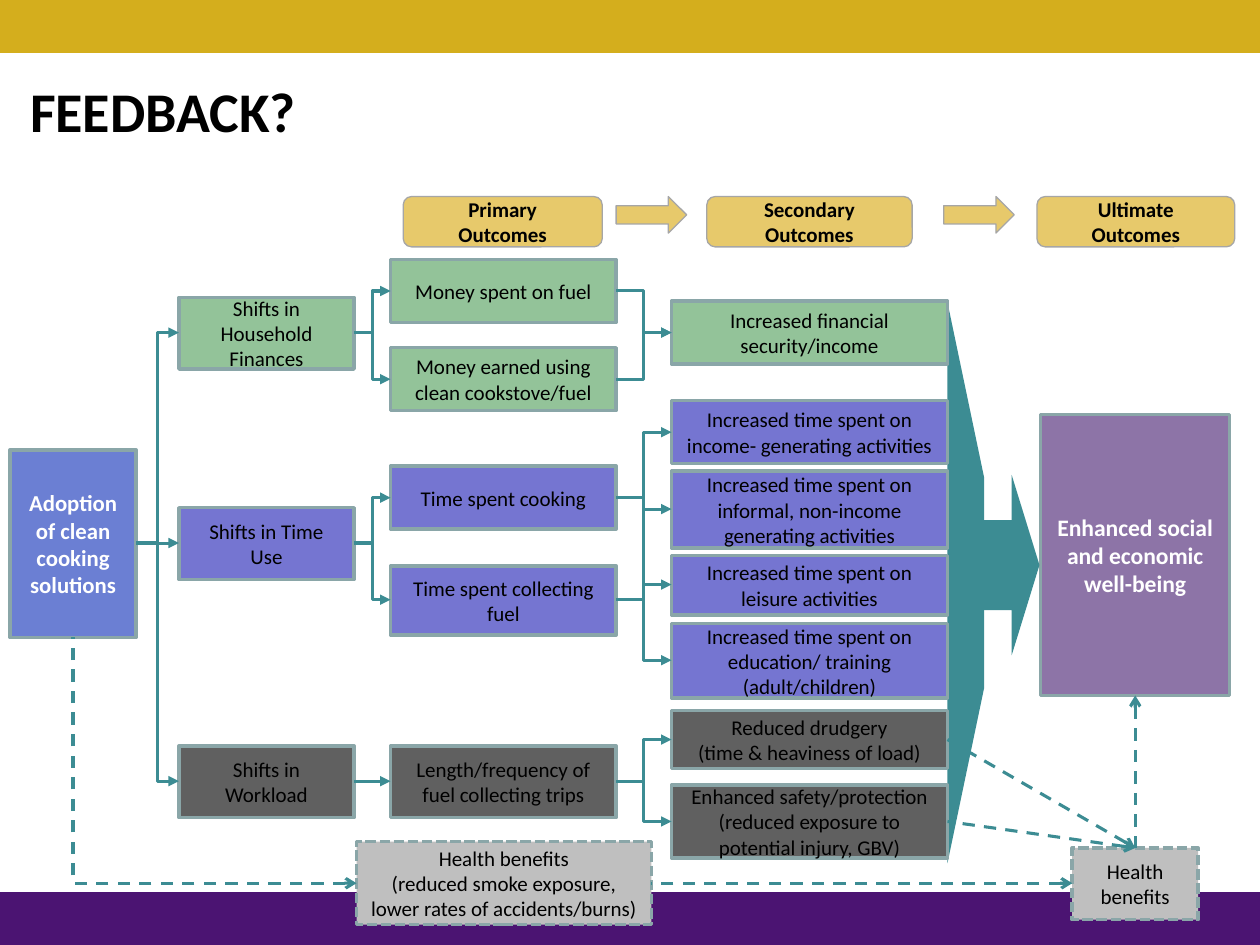
"""Draw the outcome pathway slide for clean cooking adoption."""
from dataclasses import dataclass
from typing import Optional

from lxml import etree
from pptx import Presentation
from pptx import util as u
from pptx.dml import color
from pptx.enum import dml, shapes, text
from pptx.oxml import ns

PX = 9144
COLORS = {
    "gold_band": "D4AE1D", "purple_band": "4B1472", "teal": "3C8C93",
    "border": "8AA6A8", "grey_border": "A6A6A6", "adoption": "4760C9",
    "finance": "93C399", "time": "7575D1", "work": "606060",
    "wellbeing": "481F72", "health": "BFBFBF", "heading": "D6A300",
    "black": "000000", "white": "FFFFFF",
}
KIND = shapes.MSO_SHAPE
DASH = dml.MSO_LINE


@dataclass(frozen=True)
class Box:
    label: str
    x: int
    y: int
    w: int
    h: int
    fill: str
    kind: int = KIND.RECTANGLE
    alpha: int = 100
    line: Optional[str] = "border"
    weight: float = 2
    dash: Optional[int] = None
    size: float = 12
    bold: bool = False
    ink: str = "black"

    @property
    def mid(self) -> int:
        return self.y + self.h // 2

    @property
    def center(self) -> int:
        return self.x + self.w // 2

    @property
    def left(self) -> tuple[int, int]:
        return self.x, self.mid

    @property
    def right(self) -> tuple[int, int]:
        return self.x + self.w, self.mid


def shift(label: str, y: int, fill: str) -> Box:
    return Box(label, 142, y, 139, 57, fill)


def primary(label: str, y: int, h: int, fill: str) -> Box:
    return Box(label, 310, y, 179, h, fill)


def secondary(label: str, y: int, h: int, fill: str) -> Box:
    return Box(label, 533, y, 219, h, fill)


def heading(label: str, x: int, w: int) -> Box:
    return Box(label, x, 156, w, 40, "heading", KIND.ROUNDED_RECTANGLE, 58,
               "grey_border", 0.75, bold=True)


def block_arrow(x: int) -> Box:
    return Box("", x, 156, 56, 29, "heading", KIND.RIGHT_ARROW, 58, "grey_border", 0.75)


def rgb(name: str) -> color.RGBColor:
    return color.RGBColor.from_string(COLORS[name])


def write(tf, label: str, size: float, bold: bool, ink: str, align: int) -> None:
    fmt = {"name": "Calibri", "size": u.Pt(size), "bold": bold}
    frame = {"word_wrap": True, "vertical_anchor": text.MSO_ANCHOR.MIDDLE}
    for key, value in frame.items():
        setattr(tf, key, value)
    for i, part in enumerate(label.split("\n")):
        p = tf.add_paragraph() if i else tf.paragraphs[0]
        p.alignment = align
        r = p.add_run()
        r.text = part
        r.font.color.rgb = rgb(ink)
        for key, value in fmt.items():
            setattr(r.font, key, value)


def draw_box(s, box: Box):
    sp = s.shapes.add_shape(box.kind, *(v * PX for v in (box.x, box.y, box.w, box.h)))
    sp.shadow.inherit = False
    sp.fill.solid()
    sp.fill.fore_color.rgb = rgb(box.fill)
    if box.alpha < 100:
        clr = sp.fill._xPr.find(".//" + ns.qn("a:srgbClr"))
        etree.SubElement(clr, ns.qn("a:alpha"), val=str(box.alpha * 1000))
    if box.line:
        sp.line.color.rgb = rgb(box.line)
        sp.line.width = u.Pt(box.weight)
        sp.line.dash_style = box.dash
    else:
        sp.line.fill.background()
    if box.label:
        write(sp.text_frame, box.label, box.size, box.bold, box.ink, text.PP_ALIGN.CENTER)
    return sp


def draw_link(s, tip: tuple[int, int], tail: tuple[int, int],
              dashed: bool = False, corner: bool = False) -> None:
    """Join two points with the arrowhead at the tip."""
    straight = tip[1] == tail[1] or (dashed and not corner)
    kind = shapes.MSO_CONNECTOR.STRAIGHT if straight else shapes.MSO_CONNECTOR.ELBOW
    c = s.shapes.add_connector(kind, *(v * PX for v in (*tip, *tail)))
    c.line.color.rgb = rgb("teal")
    c.line.width = u.Pt(1.75)
    if dashed:
        c.line.dash_style = DASH.DASH
    props = c._element.spPr
    if corner:
        props.find(ns.qn("a:prstGeom")).set("prst", "bentConnector2")
    etree.SubElement(props.find(ns.qn("a:ln")), ns.qn("a:headEnd"),
                     type="arrow" if dashed else "triangle")
    etree.SubElement(props, ns.qn("a:effectLst"))


ADOPTION = Box("Adoption of clean cooking solutions", 8, 357, 100, 149, "adoption",
               alpha=80, size=13, bold=True, ink="white")
WELLBEING = Box("Enhanced social and economic well-being", 826, 329, 150, 223,
                "wellbeing", alpha=62, size=13.5, bold=True, ink="white")
FINANCES = shift("Shifts in Household Finances", 236, "finance")
TIME_USE = shift("Shifts in Time Use", 403, "time")
WORKLOAD = shift("Shifts in Workload", 592, "work")
SPENT = primary("Money spent on fuel", 206, 50, "finance")
EARNED = primary("Money earned using clean cookstove/fuel", 276, 50, "finance")
COOKING = primary("Time spent cooking", 370, 50, "time")
COLLECTING = primary("Time spent collecting fuel", 449, 55, "time")
TRIPS = primary("Length/frequency of fuel collecting trips", 592, 57, "work")
SECURITY = secondary("Increased financial security/income", 239, 50, "finance")
INCOME = secondary("Increased time spent on income- generating activities", 318, 50, "time")
INFORMAL = secondary("Increased time spent on informal, non-income generating activities",
                     374, 61, "time")
LEISURE = secondary("Increased time spent on leisure activities", 441, 47, "time")
EDUCATION = secondary("Increased time spent on education/ training (adult/children)",
                      495, 59, "time")
DRUDGERY = secondary("Reduced drudgery\n(time & heaviness of load)", 564, 46, "work")
SAFETY = secondary("Enhanced safety/protection (reduced exposure to potential injury, GBV)",
                   623, 58, "work")
SMOKE = Box("Health benefits\n(reduced smoke exposure, lower rates of accidents/burns)",
            283, 668, 234, 66, "health", dash=DASH.SQUARE_DOT)
HEALTH = Box("Health benefits", 851, 673, 100, 57, "health", dash=DASH.SQUARE_DOT)
BOXES = [
    ADOPTION, WELLBEING, FINANCES, TIME_USE, WORKLOAD, SPENT, EARNED, COOKING,
    COLLECTING, TRIPS, SECURITY, INCOME, INFORMAL, LEISURE, EDUCATION, DRUDGERY,
    SAFETY, SMOKE, HEALTH, heading("Primary\nOutcomes", 320, 158),
    heading("Secondary Outcomes", 561, 163), heading("Ultimate Outcomes", 823, 157),
    block_arrow(489), block_arrow(749),
    Box("", 781, 377, 44, 143, "teal", KIND.RIGHT_ARROW, line=None),
]
LINKS = [
    (ADOPTION, (FINANCES, TIME_USE, WORKLOAD)), (FINANCES, (SPENT, EARNED)),
    (TIME_USE, (COOKING, COLLECTING)), (WORKLOAD, (TRIPS,)),
    (SPENT, (SECURITY,)), (EARNED, (SECURITY,)),
    (COOKING, (INCOME, LEISURE, EDUCATION)), (COLLECTING, (INFORMAL,)),
    (TRIPS, (DRUDGERY, SAFETY)),
]


def main() -> None:
    prs = Presentation()
    prs.slide_width, prs.slide_height = 1000 * PX, 750 * PX
    s = prs.slides.add_slide(prs.slide_layouts[6])
    for y, fill in ((0, "gold_band"), (708, "purple_band")):
        draw_box(s, Box("", 0, y, 1000, 42, fill, line=None))
    title = s.shapes.add_textbox(*(v * PX for v in (14, 25, 650, 125)))
    write(title.text_frame, "FEEDBACK?", 32, True, "black", text.PP_ALIGN.LEFT)

    funnel = draw_box(s, Box("", 544, 448, 445, 29, "teal", KIND.TRAPEZOID, line=None))
    funnel.rotation = 90
    funnel.adjustments[0] = 4.78
    for box in BOXES:
        draw_box(s, box)
    for source, targets in LINKS:
        for target in targets:
            draw_link(s, target.left, source.right)

    health_top = (HEALTH.center, HEALTH.y)
    for source in (DRUDGERY, SAFETY):
        draw_link(s, health_top, source.right, dashed=True)
    draw_link(s, (WELLBEING.center, WELLBEING.y + WELLBEING.h), health_top, dashed=True)
    draw_link(s, HEALTH.left, SMOKE.right, dashed=True)
    draw_link(s, SMOKE.left, (ADOPTION.center, ADOPTION.y + ADOPTION.h),
              dashed=True, corner=True)
    prs.save("out.pptx")


if __name__ == "__main__":
    main()
